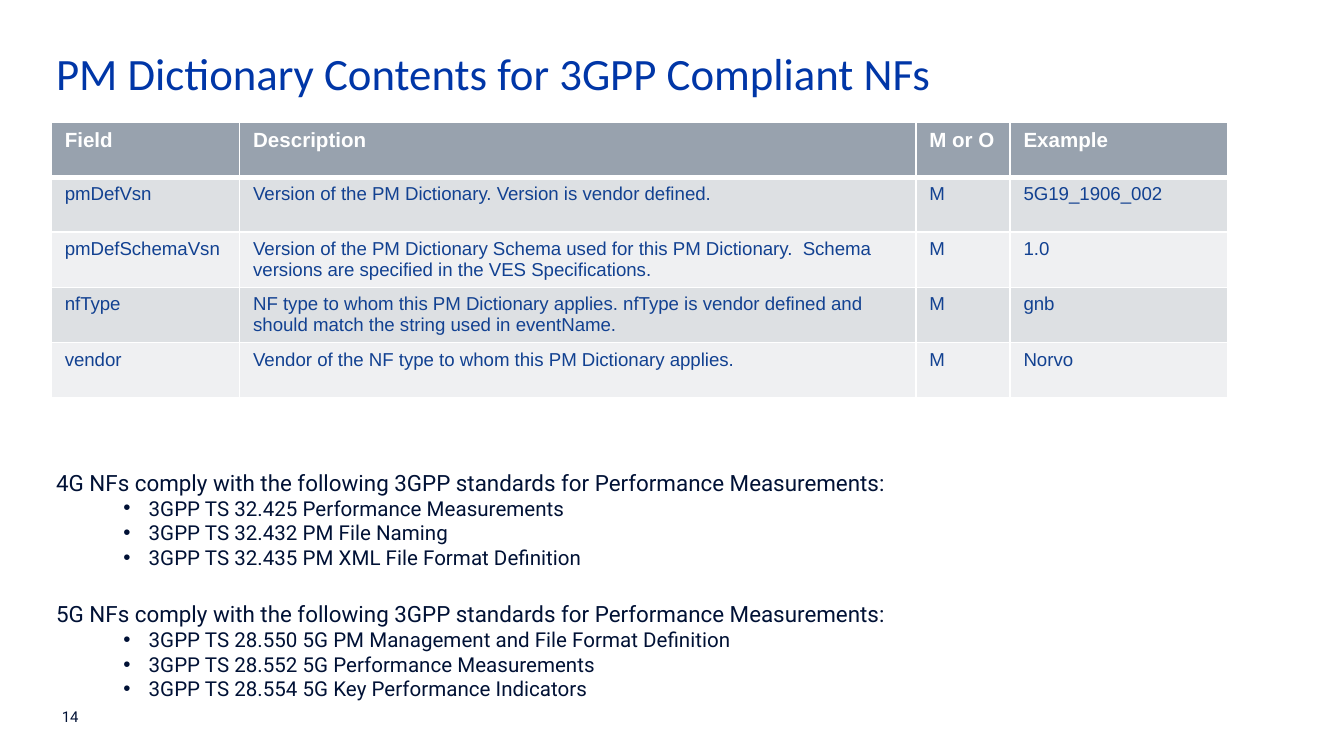
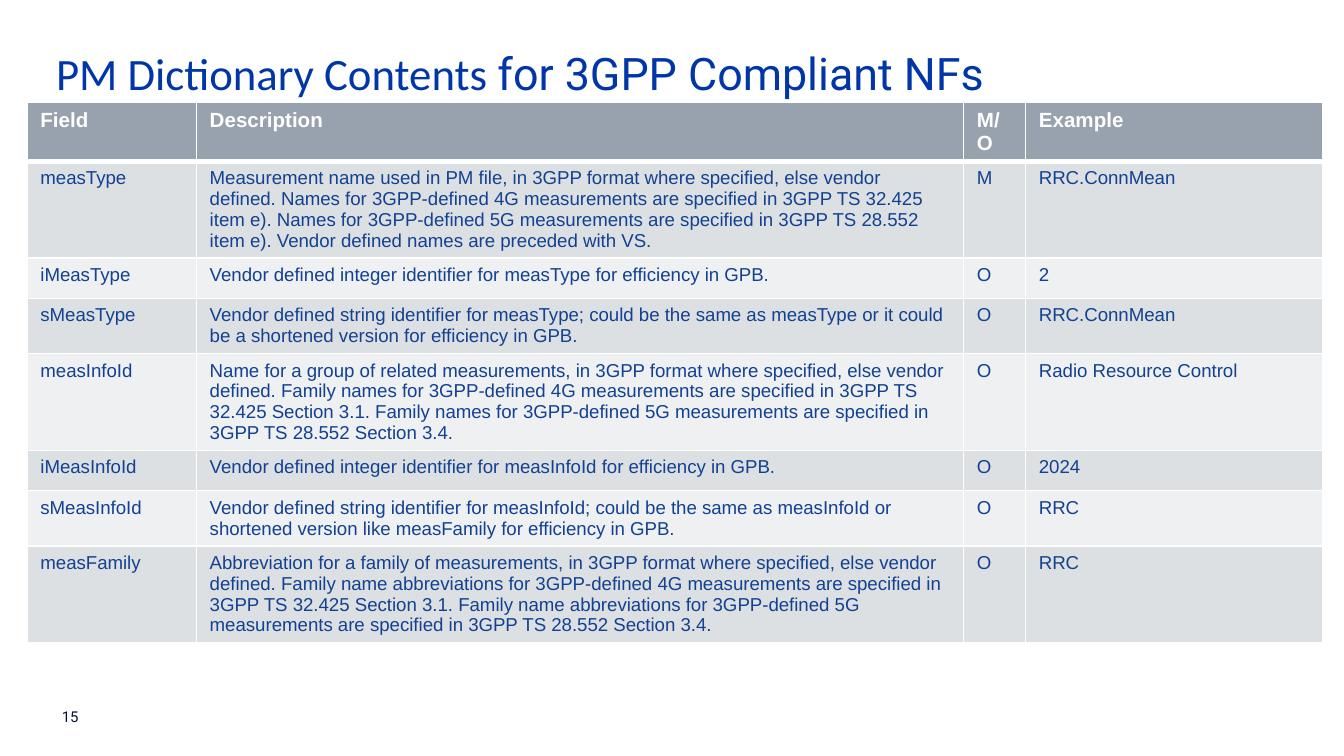
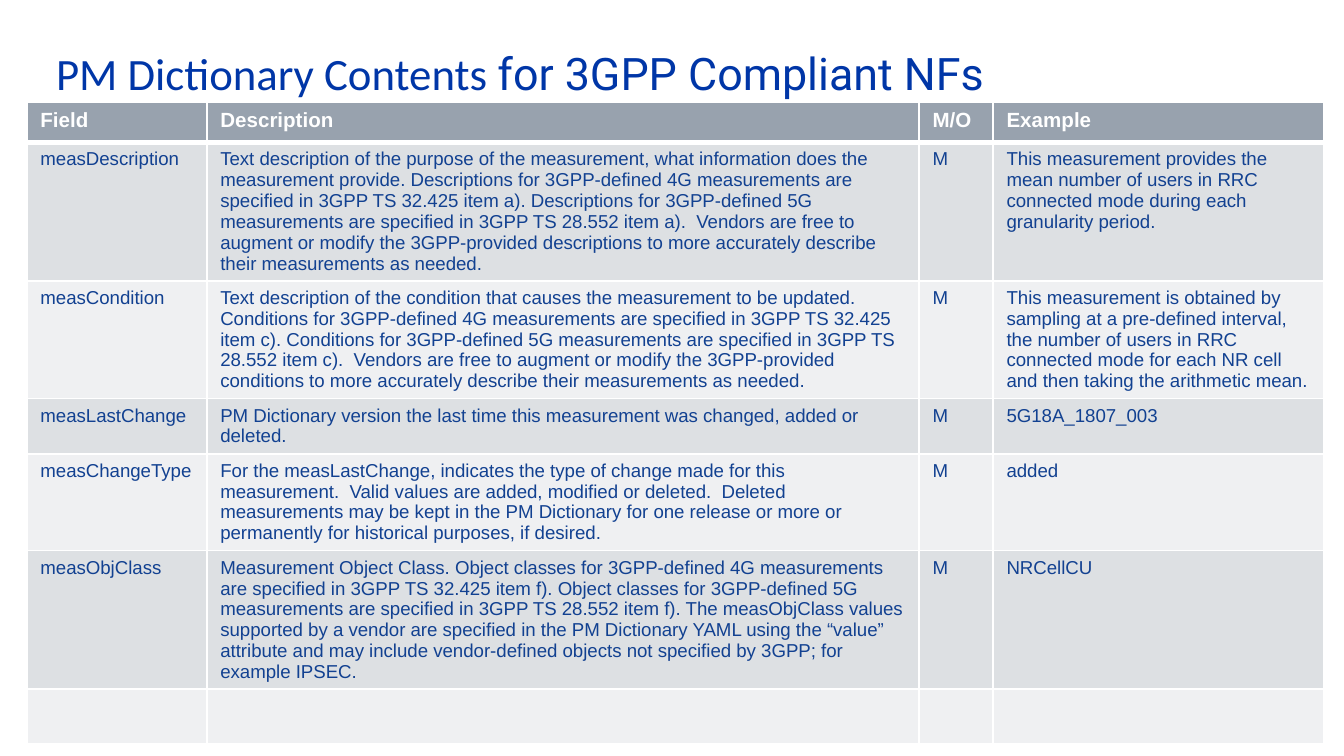
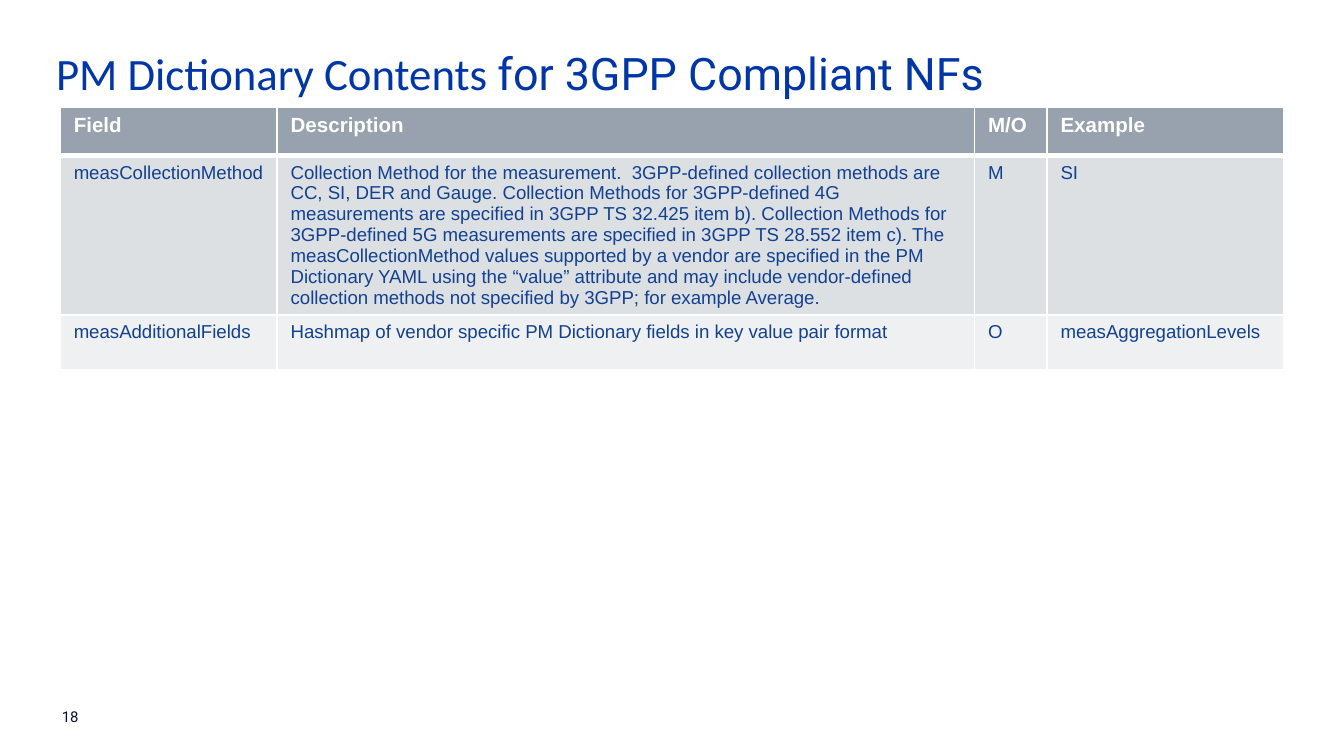
from dataclasses import dataclass

from lxml import etree
from pptx import Presentation
from pptx.dml.color import RGBColor
from pptx.enum import text
from pptx.oxml import ns
from pptx.util import Cm, Pt


@dataclass(frozen=True)
class Theme:
    # Colours
    title: str = "0036A7"
    ink: str = "001135"
    cell_text: str = "124191"
    white: str = "FFFFFF"
    header: str = "98A2AE"
    bands: tuple = ("DDE0E3", "EFF0F2")
    # Fonts
    title_font: str = "Calibri"
    body_font: str = "Roboto"
    table_font: str = "Arial"
    # Type sizes and line widths in points
    title_size: int = 24
    intro_size: int = 12
    header_size: int = 11
    bullet_size: int = 11
    cell_size: int = 10
    number_size: int = 8
    rule: int = 1
    header_rule: int = 3
    group_gap: float = 16.4


T = Theme()
TITLE_ONLY, TITLE_AND_BODY = 5, 1

# Boxes in cm: left, top, width, height
TITLE_BOX = (0.81, 0.69, 22.89, 1.14)
NUMBER_BOX = (1.17, 13.39, 0.41, 0.33)
STANDARDS_BOX = (0.81, 8.61, 22.17, 4.83)

# Row heights in cm
TALL, SHORT = 1.04, 0.76

TITLE_PARTS = ("PM Dictionary Contents ", "for 3GPP Compliant NFs")

STANDARDS = [
    ("4G", ["3GPP TS 32.425 Performance Measurements",
            "3GPP TS 32.432 PM File Naming",
            "3GPP TS 32.435 PM XML File Format Definition"]),
    ("5G", ["3GPP TS 28.550 5G PM Management and File Format Definition",
            "3GPP TS 28.552 5G Performance Measurements",
            "3GPP TS 28.554 5G Key Performance Indicators"]),
]

# Dictionary fields: name, description, mandatory or optional, example
FILE_FIELDS = [
    ("pmDefVsn", "Version of the PM Dictionary. Version is vendor defined.",
     "M", "5G19_1906_002"),
    ("pmDefSchemaVsn",
     "Version of the PM Dictionary Schema used for this PM Dictionary.  "
     "Schema versions are specified in the VES Specifications.",
     "M", "1.0"),
    ("nfType",
     "NF type to whom this PM Dictionary applies. nfType is vendor defined "
     "and should match the string used in eventName.",
     "M", "gnb"),
    ("vendor", "Vendor of the NF type to whom this PM Dictionary applies.",
     "M", "Norvo"),
]

NAME_FIELDS = [
    ("measType",
     "Measurement name used in PM file, in 3GPP format where specified, else "
     "vendor defined. Names for 3GPP-defined 4G measurements are specified in "
     "3GPP TS 32.425 item e). Names for 3GPP-defined 5G measurements are "
     "specified in 3GPP TS 28.552 item e). Vendor defined names are preceded "
     "with VS.",
     "M", "RRC.ConnMean"),
    ("iMeasType",
     "Vendor defined integer identifier for measType for efficiency in GPB.",
     "O", "2"),
    ("sMeasType",
     "Vendor defined string identifier for measType; could be the same as "
     "measType or it could be a shortened version for efficiency in GPB.",
     "O", "RRC.ConnMean"),
    ("measInfoId",
     "Name for a group of related measurements, in 3GPP format where "
     "specified, else vendor defined. Family names for 3GPP-defined 4G "
     "measurements are specified in 3GPP TS 32.425 Section 3.1. Family names "
     "for 3GPP-defined 5G measurements are specified in 3GPP TS 28.552 "
     "Section 3.4.",
     "O", "Radio Resource Control"),
    ("iMeasInfoId",
     "Vendor defined integer identifier for measInfoId for efficiency in GPB.",
     "O", "2024"),
    ("sMeasInfoId",
     "Vendor defined string identifier for measInfoId; could be the same as "
     "measInfoId or shortened version like measFamily for efficiency in GPB.",
     "O", "RRC"),
    ("measFamily",
     "Abbreviation for a family of measurements, in 3GPP format where "
     "specified, else vendor defined. Family name abbreviations for "
     "3GPP-defined 4G measurements are specified in 3GPP TS 32.425 Section "
     "3.1. Family name abbreviations for 3GPP-defined 5G measurements are "
     "specified in 3GPP TS 28.552 Section 3.4.",
     "O", "RRC"),
]

DETAIL_FIELDS = [
    ("measDescription",
     "Text description of the purpose of the measurement, what information "
     "does the measurement provide. Descriptions for 3GPP-defined 4G "
     "measurements are specified in 3GPP TS 32.425 item a). Descriptions for "
     "3GPP-defined 5G measurements are specified in 3GPP TS 28.552 item a).  "
     "Vendors are free to augment or modify the 3GPP-provided descriptions to "
     "more accurately describe their measurements as needed.",
     "M",
     "This measurement provides the mean number of users in RRC connected "
     "mode during each granularity period."),
    ("measCondition",
     "Text description of the condition that causes the measurement to be "
     "updated. Conditions for 3GPP-defined 4G measurements are specified in "
     "3GPP TS 32.425 item c). Conditions for 3GPP-defined 5G measurements are "
     "specified in 3GPP TS 28.552 item c).  Vendors are free to augment or "
     "modify the 3GPP-provided conditions to more accurately describe their "
     "measurements as needed.",
     "M",
     "This measurement is obtained by sampling at a pre-defined interval, the "
     "number of users in RRC connected mode for each NR cell and then taking "
     "the arithmetic mean."),
    ("measLastChange",
     "PM Dictionary version the last time this measurement was changed, added "
     "or deleted.",
     "M", "5G18A_1807_003"),
    ("measChangeType",
     "For the measLastChange, indicates the type of change made for this "
     "measurement.  Valid values are added, modified or deleted.  Deleted "
     "measurements may be kept in the PM Dictionary for one release or more "
     "or permanently for historical purposes, if desired.",
     "M", "added"),
    ("measObjClass",
     "Measurement Object Class. Object classes for 3GPP-defined 4G "
     "measurements are specified in 3GPP TS 32.425 item f). Object classes "
     "for 3GPP-defined 5G measurements are specified in 3GPP TS 28.552 item "
     "f). The measObjClass values supported by a vendor are specified in the "
     "PM Dictionary YAML using the “value” attribute and may include "
     "vendor-defined objects not specified by 3GPP; for example IPSEC.",
     "M", "NRCellCU"),
    ("", "", "", ""),
]

METHOD_FIELDS = [
    ("measCollectionMethod",
     "Collection Method for the measurement.  3GPP-defined collection methods "
     "are CC, SI, DER and Gauge. Collection Methods for 3GPP-defined 4G "
     "measurements are specified in 3GPP TS 32.425 item b). Collection "
     "Methods for 3GPP-defined 5G measurements are specified in 3GPP TS "
     "28.552 item c). The measCollectionMethod values supported by a vendor "
     "are specified in the PM Dictionary YAML using the “value” attribute and "
     "may include vendor-defined collection methods not specified by 3GPP; "
     "for example Average.",
     "M", "SI"),
    ("measAdditionalFields",
     "Hashmap of vendor specific PM Dictionary fields in key value pair format",
     "O", "measAggregationLevels"),
]


# Shared helpers
def add_run(p, words, size, font, color, bold=False):
    r = p.add_run()
    r.text = words
    r.font.size, r.font.name, r.font.bold = Pt(size), font, bold
    r.font.color.rgb = RGBColor.from_string(color)


def place(sp, box):
    sp.left, sp.top, sp.width, sp.height = map(Cm, box)


def set_frame(tf, insets, anchor, wrap=True):
    tf.auto_size = text.MSO_AUTO_SIZE.NONE
    tf.word_wrap = wrap
    tf.vertical_anchor = anchor
    tf.margin_left, tf.margin_top, tf.margin_right, tf.margin_bottom = map(Cm, insets)


def set_bullet(p, char=None, left=0, hang=0):
    pPr = p._p.get_or_add_pPr()
    pPr.set("marL", str(Cm(left)))
    pPr.set("indent", str(-Cm(hang)))
    if char:
        etree.SubElement(pPr, ns.qn("a:buFont"), typeface=T.table_font)
        etree.SubElement(pPr, ns.qn("a:buChar"), char=char)
    else:
        etree.SubElement(pPr, ns.qn("a:buNone"))


def set_borders(cell, top, bottom):
    tcPr = cell._tc.get_or_add_tcPr()
    widths = {"lnL": T.rule, "lnR": T.rule, "lnT": top, "lnB": bottom}
    # Borders come before the fill in the cell properties
    for i, (side, width) in enumerate(widths.items()):
        ln = etree.Element(ns.qn("a:" + side), w=str(Pt(width)))
        fill = etree.SubElement(ln, ns.qn("a:solidFill"))
        etree.SubElement(fill, ns.qn("a:srgbClr"), val=T.white)
        tcPr.insert(i, ln)


# Slide regions
def add_title(s, box, tail_font):
    sp = s.shapes.title
    place(sp, box)
    tf = sp.text_frame
    set_frame(tf, (0.25, 0.17, 0.25, 0), text.MSO_ANCHOR.TOP)
    p = tf.paragraphs[0]
    p.alignment = text.PP_ALIGN.LEFT
    for words, font in zip(TITLE_PARTS, (T.title_font, tail_font)):
        add_run(p, words, T.title_size, font, T.title)


def add_number(s, box, number):
    tf = s.shapes.add_textbox(*map(Cm, box)).text_frame
    set_frame(tf, (0, 0, 0, 0), text.MSO_ANCHOR.BOTTOM, wrap=False)
    add_run(tf.paragraphs[0], str(number), T.number_size, T.body_font, T.ink)


def add_field_table(s, left, top, cols, heights, mark, fields):
    rows = [("Field", "Description", mark, "Example"), *fields]
    frame = s.shapes.add_table(len(rows), len(cols), Cm(left), Cm(top),
                               Cm(sum(cols)), Cm(sum(heights)))
    table = frame.table
    for col, width in zip(table.columns, cols):
        col.width = Cm(width)
    for i, (row, height, words) in enumerate(zip(table.rows, heights, rows)):
        row.height = Cm(height)
        head = i == 0
        fill = T.header if head else T.bands[(i - 1) % 2]
        color = T.white if head else T.cell_text
        size = T.header_size if head else T.cell_size
        for cell, value in zip(row.cells, words):
            cell.fill.solid()
            cell.fill.fore_color.rgb = RGBColor.from_string(fill)
            set_borders(cell, T.header_rule if i == 1 else T.rule,
                        T.header_rule if head else T.rule)
            if value:
                add_run(cell.text_frame.paragraphs[0], value, size,
                        T.table_font, color, head)


def add_standards(s, box):
    sp = s.placeholders[1]
    place(sp, box)
    tf = sp.text_frame
    set_frame(tf, (0.25, 0.25, 0.2, 0.13), text.MSO_ANCHOR.TOP)
    for i, (generation, standards) in enumerate(STANDARDS):
        # Group heading
        p = tf.add_paragraph() if i else tf.paragraphs[0]
        p.space_before = Pt(T.group_gap if i else 0)
        set_bullet(p)
        add_run(p, f"{generation} NFs comply with the following 3GPP standards "
                "for Performance Measurements:", T.intro_size, T.body_font, T.ink)
        # Bulleted standards
        for standard in standards:
            p = tf.add_paragraph()
            p.level = 1
            p.space_before = Pt(0)
            set_bullet(p, "•", 1.75, 0.48)
            add_run(p, standard, T.bullet_size, T.body_font, T.ink)


# Slide type
def add_dictionary_slide(prs, number, table, tail_font=T.body_font, standards=False):
    layout = TITLE_AND_BODY if standards else TITLE_ONLY
    s = prs.slides.add_slide(prs.slide_layouts[layout])
    add_title(s, TITLE_BOX, tail_font)
    if number:
        add_number(s, NUMBER_BOX, number)
    add_field_table(s, **table)
    if standards:
        add_standards(s, STANDARDS_BOX)


def main():
    prs = Presentation()
    prs.slide_width, prs.slide_height = Cm(25.4), Cm(14.29)

    add_dictionary_slide(prs, 14, dict(
        left=0.97, top=2.31, cols=(3.56, 12.78, 1.78, 4.11),
        heights=[TALL] * 5, mark="M or O", fields=FILE_FIELDS),
        tail_font=T.title_font, standards=True)
    add_dictionary_slide(prs, 15, dict(
        left=0.51, top=1.93, cols=(3.2, 14.5, 1.17, 5.61),
        heights=[SHORT, TALL, SHORT, TALL, TALL, SHORT, TALL, TALL],
        mark="M/O", fields=NAME_FIELDS))
    add_dictionary_slide(prs, None, dict(
        left=0.51, top=1.93, cols=(3.4, 13.46, 1.4, 6.25),
        heights=[SHORT] + [TALL] * 6, mark="M/O", fields=DETAIL_FIELDS))
    add_dictionary_slide(prs, 18, dict(
        left=1.14, top=2.03, cols=(4.1, 13.18, 1.37, 4.47),
        heights=[0.91, TALL, TALL], mark="M/O", fields=METHOD_FIELDS))

    prs.save("out.pptx")


if __name__ == "__main__":
    main()
